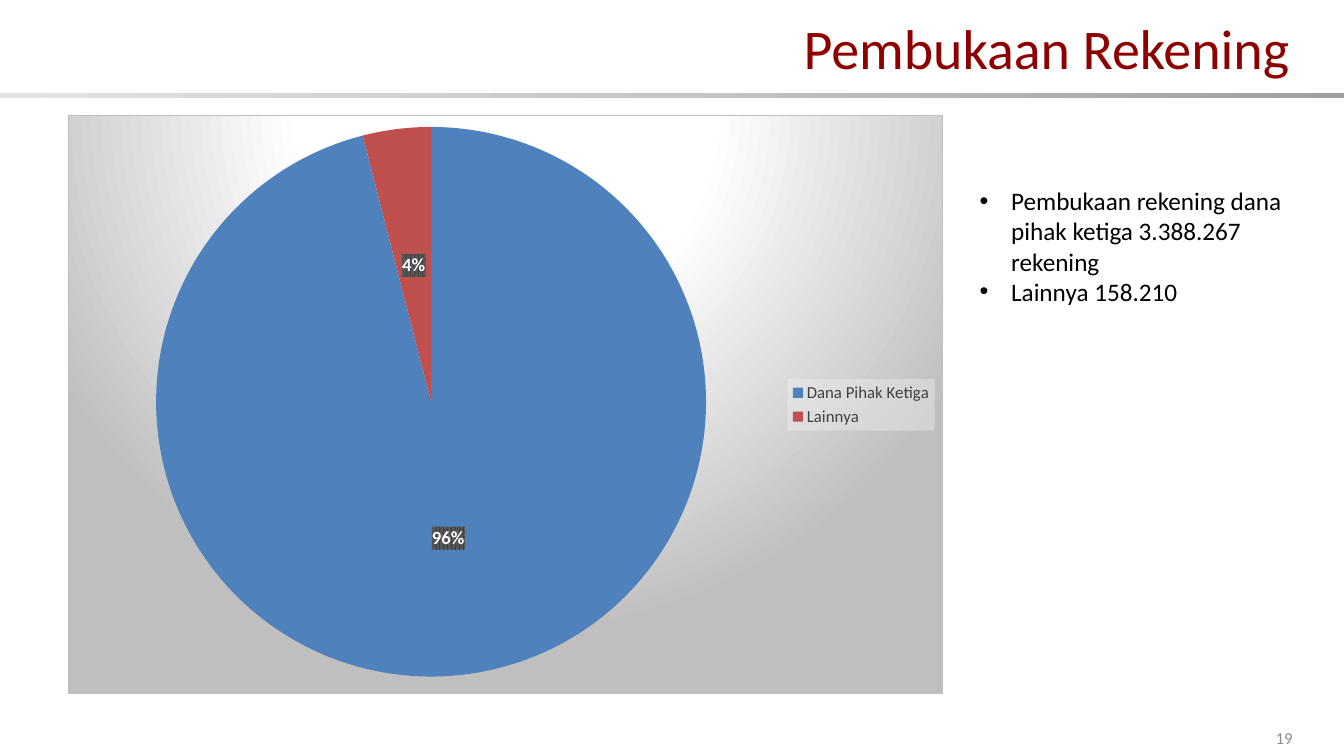
from dataclasses import dataclass
from typing import Any, Optional

import lxml.etree
import pptx
import pptx.chart.data
import pptx.dml.color
import pptx.enum.chart
import pptx.enum.shapes
import pptx.enum.text
import pptx.oxml
import pptx.oxml.ns
import pptx.util

Pt = pptx.util.Pt
RGBColor = pptx.dml.color.RGBColor
Align = pptx.enum.text.PP_ALIGN
Anchor = pptx.enum.text.MSO_ANCHOR

FONT = "Calibri"
WHITE = RGBColor(0xFF, 0xFF, 0xFF)
BLACK = RGBColor(0x00, 0x00, 0x00)
MAROON = RGBColor(0x8E, 0x00, 0x00)
PAGE_GRAY = RGBColor(0x8C, 0x8C, 0x8C)
LEGEND_GRAY = RGBColor(0x40, 0x40, 0x40)
LABEL_GRAY = RGBColor(0x59, 0x59, 0x59)
LEGEND_BACK = RGBColor(0xF2, 0xF2, 0xF2)
BORDER_GRAY = RGBColor(0xBF, 0xBF, 0xBF)
RULE_DARK = RGBColor(0xA0, 0xA0, 0xA0)
RULE_MID = RGBColor(0xC5, 0xC5, 0xC5)
RULE_LIGHT = RGBColor(0xE3, 0xE3, 0xE3)
BLUE = RGBColor(0x4F, 0x81, 0xBD)
RED = RGBColor(0xC0, 0x50, 0x4D)


@dataclass(frozen=True)
class TextBlock:
    left: float
    top: float
    width: float
    height: float
    lines: tuple[str, ...]
    size: float
    color: RGBColor
    align: Any = Align.LEFT
    anchor: Any = Anchor.MIDDLE
    fill: Optional[RGBColor] = None
    bulleted: bool = False


@dataclass(frozen=True)
class Slice:
    category: str
    percent: int
    color: RGBColor


TEXT_BLOCKS = (
    TextBlock(145.44, 12.24, 782.64, 42.48, ("Pembukaan Rekening",), 40, MAROON, Align.RIGHT),
    TextBlock(897.12, 514.08, 40.32, 25.92, ("19",), 12, PAGE_GRAY, Align.CENTER, fill=WHITE),
    TextBlock(
        692.64, 128.88, 244.08, 116.64,
        ("Pembukaan rekening dana pihak ketiga 3.388.267 rekening", "Lainnya 158.210"),
        18, BLACK, anchor=Anchor.TOP, bulleted=True,
    ),
)
SLICES = (Slice("Dana Pihak Ketiga", 96, BLUE), Slice("Lainnya", 4, RED))


def xml_part(markup: str) -> Any:
    namespaces = pptx.oxml.ns.nsdecls("a", "c")
    tag_end = min(i for i in (markup.find(" "), markup.find(">"), markup.find("/")) if i > 0)
    return pptx.oxml.parse_xml(f"{markup[:tag_end]} {namespaces}{markup[tag_end:]}")


def gradient(stops: tuple[tuple[int, RGBColor], ...], direction: str) -> str:
    stop_xml = "".join(
        f'<a:gs pos="{place * 1000}"><a:srgbClr val="{color}"/></a:gs>' for place, color in stops
    )
    return f'<a:gradFill rotWithShape="1"><a:gsLst>{stop_xml}</a:gsLst>{direction}</a:gradFill>'


def add_backdrop(element: Any, properties: str) -> None:
    text_properties = element.find(pptx.oxml.ns.qn("c:txPr"))
    text_properties.addprevious(xml_part(f"<c:spPr>{properties}</c:spPr>"))


def style_font(font: Any, size: float, color: RGBColor) -> None:
    font.name = FONT
    font.size = Pt(size)
    font.color.rgb = color


def add_text(slide: Any, block: TextBlock) -> None:
    box = slide.shapes.add_textbox(
        Pt(block.left), Pt(block.top), Pt(block.width), Pt(block.height)
    )
    if block.fill is not None:
        box.fill.solid()
        box.fill.fore_color.rgb = block.fill
    frame = box.text_frame
    frame.word_wrap = True
    frame.vertical_anchor = block.anchor
    for index, line in enumerate(block.lines):
        paragraph = frame.add_paragraph() if index else frame.paragraphs[0]
        paragraph.alignment = block.align
        if block.bulleted:
            properties = paragraph._p.get_or_add_pPr()
            properties.set("marL", str(Pt(22.5)))
            properties.set("indent", str(-Pt(22.5)))
            properties.append(xml_part('<a:buFont typeface="Arial"/>'))
            properties.append(xml_part('<a:buChar char="•"/>'))
        run = paragraph.add_run()
        run.text = line
        style_font(run.font, block.size, block.color)


def add_header_rule(slide: Any) -> None:
    rule = slide.shapes.add_shape(
        pptx.enum.shapes.MSO_SHAPE.RECTANGLE, Pt(0), Pt(66.24), Pt(960), Pt(3.6)
    )
    rule.shadow.inherit = False
    rule.line.fill.background()
    stops = ((0, RULE_DARK), (50, RULE_MID), (100, RULE_LIGHT))
    outline = rule._element.spPr.find(pptx.oxml.ns.qn("a:prstGeom"))
    outline.addnext(xml_part(gradient(stops, '<a:lin ang="10800000" scaled="0"/>')))


def add_account_chart(slide: Any) -> None:
    data = pptx.chart.data.CategoryChartData()
    data.categories = [part.category for part in SLICES]
    data.add_series("Series 1", [part.percent for part in SLICES])
    chart = slide.shapes.add_chart(
        pptx.enum.chart.XL_CHART_TYPE.PIE, Pt(48.24), Pt(82.08), Pt(625.68), Pt(414), data
    ).chart
    style_font(chart.font, 10, BLACK)
    chart.has_title = False

    chart.has_legend = True
    legend = chart.legend
    legend.position = pptx.enum.chart.XL_LEGEND_POSITION.RIGHT
    legend.include_in_layout = False
    style_font(legend.font, 12, LEGEND_GRAY)
    add_backdrop(
        legend._element,
        f'<a:solidFill><a:srgbClr val="{LEGEND_BACK}"><a:alpha val="39000"/>'
        "</a:srgbClr></a:solidFill>",
    )

    pie = chart.plots[0]
    pie.vary_by_categories = True
    for index, part in enumerate(SLICES):
        fill = pie.series[0].points[index].format.fill
        fill.solid()
        fill.fore_color.rgb = part.color

    pie.has_data_labels = True
    labels = pie.data_labels
    labels.show_value = False
    labels.show_percentage = True
    labels.number_format = "0%"
    labels.number_format_is_linked = False
    labels.position = pptx.enum.chart.XL_LABEL_POSITION.CENTER
    style_font(labels.font, 13.3, WHITE)
    labels.font.bold = True
    add_backdrop(
        labels._element,
        f'<a:pattFill prst="pct75"><a:fgClr><a:srgbClr val="{LEGEND_GRAY}"/></a:fgClr>'
        f'<a:bgClr><a:srgbClr val="{LABEL_GRAY}"/></a:bgClr></a:pattFill>',
    )

    chart_space = chart._chartSpace
    radial = gradient(
        ((0, WHITE), (39, WHITE), (100, BORDER_GRAY)),
        '<a:path path="circle"><a:fillToRect l="50000" t="-80000" r="50000" b="180000"/></a:path>',
    )
    add_backdrop(
        chart_space,
        f'{radial}<a:ln w="{Pt(0.75)}"><a:solidFill><a:srgbClr val="{BORDER_GRAY}"/>'
        "</a:solidFill></a:ln>",
    )
    chart_space.chart.addprevious(xml_part('<c:roundedCorners val="0"/>'))

    plot_area = chart_space.chart.plotArea
    for layout in plot_area.findall(pptx.oxml.ns.qn("c:layout")):
        plot_area.remove(layout)
    bounds = "".join(
        f'<c:{side} val="{share}"/>'
        for side, share in (("x", 0.1), ("y", 0.02), ("w", 0.63), ("h", 0.95))
    )
    plot_area.insert(0, xml_part(
        '<c:layout><c:manualLayout><c:layoutTarget val="inner"/><c:xMode val="edge"/>'
        f'<c:yMode val="edge"/>{bounds}</c:manualLayout></c:layout>'
    ))


def main() -> None:
    deck = pptx.Presentation()
    deck.slide_width = Pt(960)
    deck.slide_height = Pt(540)
    slide = deck.slides.add_slide(deck.slide_layouts[6])
    add_header_rule(slide)
    add_account_chart(slide)
    for block in TEXT_BLOCKS:
        add_text(slide, block)
    deck.save("out.pptx")


if __name__ == "__main__":
    main()
